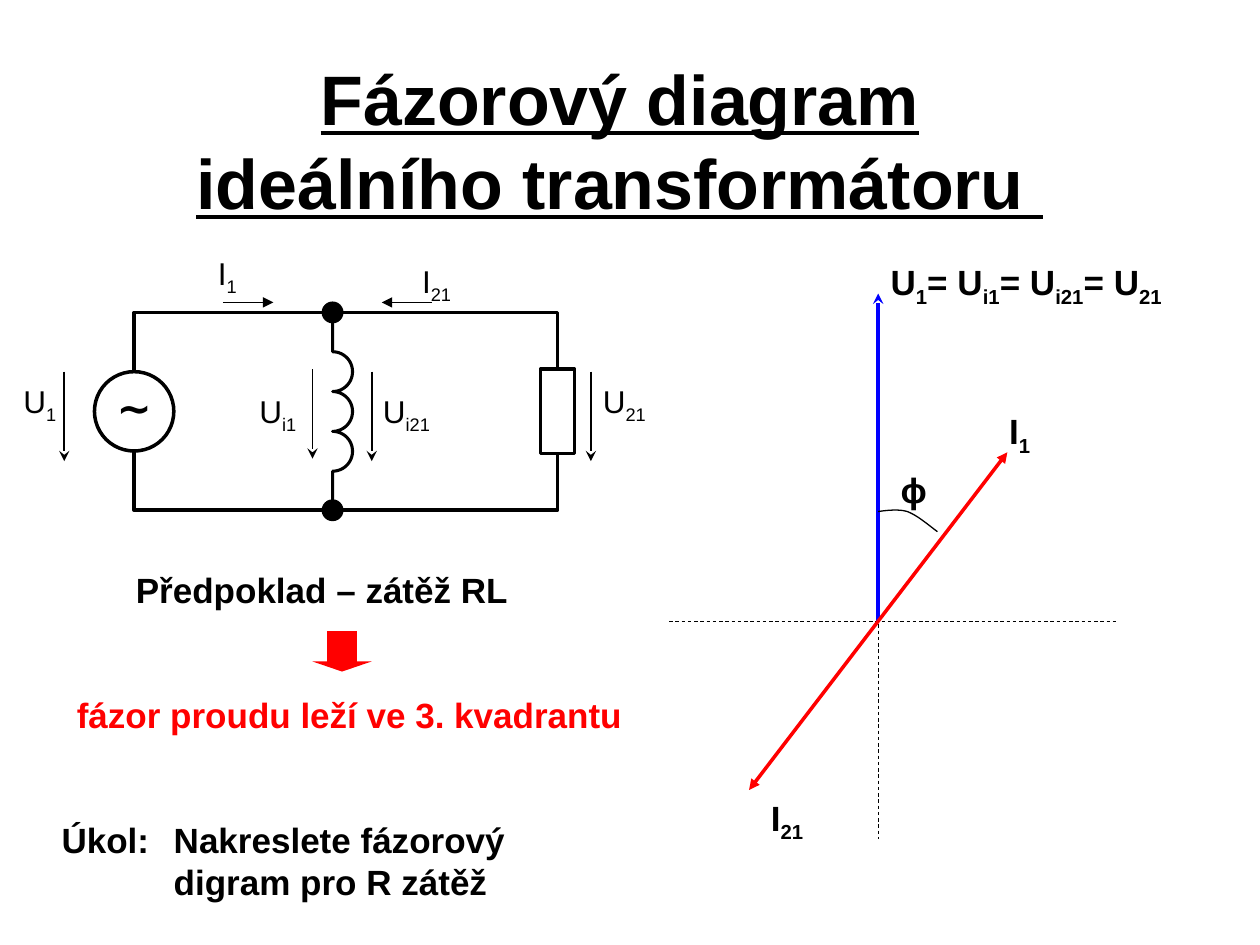
import math
from lxml import etree
from pptx import Presentation, util as u
from pptx.dml.color import RGBColor
from pptx.enum import dml, shapes, text
from pptx.oxml.ns import qn

INK = {"black": "000000", "red": "FF0000", "blue": "0000FF"}
COLS, ROWS = 100, 75
CELL = u.Inches(10) // COLS
TOP, LOW = 24.8, 40.5      # the two wires of the circuit
COIL, RAD = 26.4, 1.58     # axis and radius of the coil's turns
ORIGIN = (69.7, 49.3)      # start of all phasors


def grid(*vals):
    """Turn grid cells into slide lengths."""
    return [round(v * CELL) for v in vals]


def tint(name):
    return RGBColor.from_string(INK[name])


def pen(line, color, width):
    line.color.rgb = tint(color)
    line.width = u.Pt(width)


def line(slide, start, end, width=1, color="black", head=None, dash=False):
    wire = slide.shapes.add_connector(
        shapes.MSO_CONNECTOR.STRAIGHT, *grid(*start, *end))
    pen(wire.line, color, width)
    if dash:
        wire.line.dash_style = dml.MSO_LINE.DASH
    if head:
        etree.SubElement(wire.line._get_or_add_ln(), qn("a:tailEnd"), type=head)
    etree.SubElement(wire._element.spPr, qn("a:effectLst"))


def path(slide, pts, width):
    """Draw an open, unfilled outline through the points."""
    first, *rest = [grid(*p) for p in pts]
    form = slide.shapes.build_freeform(*first)
    form.add_line_segments(rest, close=False)
    shape = form.convert_to_shape()
    shape.shadow.inherit = False
    shape.fill.background()
    pen(shape.line, "black", width)


def block(slide, kind, box, fill=None, width=None):
    shape = slide.shapes.add_shape(kind, *grid(*box))
    shape.shadow.inherit = False
    if fill:
        shape.fill.solid()
        shape.fill.fore_color.rgb = tint(fill)
    else:
        shape.fill.background()
    if width:
        pen(shape.line, "black", width)
    else:
        shape.line.fill.background()


def label(slide, words, box, size=20, bold=True, color="black",
          center=False, pad=None, middle=False, under=False):
    """Write text in which every second part between bars is a subscript."""
    frame = slide.shapes.add_textbox(*grid(*box)).text_frame
    frame.word_wrap = True
    if pad is not None:
        frame.margin_left = frame.margin_right = u.Inches(pad)
        frame.margin_top = frame.margin_bottom = u.Inches(pad)
    if middle:
        frame.vertical_anchor = text.MSO_ANCHOR.MIDDLE
    para = frame.paragraphs[0]
    para.alignment = text.PP_ALIGN.CENTER if center else text.PP_ALIGN.LEFT
    for num, part in enumerate(words.split("|")):
        run = para.add_run()
        run.text = part
        font = run.font
        font.name, font.size, font.bold = "Arial", u.Pt(size), bold
        font.underline = under
        font.color.rgb = tint(color)
        if num % 2:
            font._element.set("baseline", "-25000")
    return para


def bezier(a, b, c, d, steps=12):
    for i in range(steps + 1):
        t = i / steps
        s = 1 - t
        yield [s**3 * p + 3 * s * s * t * q + 3 * s * t * t * r + t**3 * v
               for p, q, r, v in zip(a, b, c, d)]


def coil(slide):
    pts = [(COIL, 25.6)]
    for turn in range(3):
        mid = 29.5 + turn * 2 * RAD
        for deg in range(-90, 91, 6):
            ang = math.radians(deg)
            pts.append((COIL + RAD * math.cos(ang), mid + RAD * math.sin(ang)))
    path(slide, pts + [(COIL, 39.7)], 1.75)


def circuit(slide):
    kind = shapes.MSO_SHAPE
    block(slide, kind.OVAL, (7.5, 29.5, 6.3, 6.3), width=2)
    block(slide, kind.RECTANGLE, (42.9, 29.3, 2.7, 6.7), width=2)
    for row, ends in ((TOP, (29.4, 29.2)), (LOW, (35.9, 36.1))):
        block(slide, kind.OVAL, (COIL - 0.8, row - 0.8, 1.6, 1.6), "black", 1)
        for col, end in zip((10.65, 44.25), ends):
            path(slide, [(col, end), (col, row), (COIL, row)], 2)
    coil(slide)
    for col, row in ((5.1, 29.5), (24.8, 29.3), (29.5, 29.5), (46.9, 29.5)):
        line(slide, (col, row), (col, row + 7.1), head="stealth")
    for start, end in ((17.7, 21.7), (34.3, 30.3)):
        line(slide, (start, 24), (end, 24), head="triangle")
    for words, left, top, wide in (
            ("U|1", 1.2, 30.3, 3.9), ("I|1", 16.1, 20.2, 3.9),
            ("I|21", 32.7, 20.8, 3.9), ("U|21", 47.6, 30.3, 3.9),
            ("U|i1", 20.1, 31.1, 3.9), ("U|i21", 29.5, 31.1, 5.5)):
        label(slide, words, (left, top, wide, 3), 18, False, center=True, pad=0)
    label(slide, "∼", (8.3, 30.3, 4.7, 4), 24, center=True, pad=0, middle=True)


def phasors(slide):
    x, y = ORIGIN
    line(slide, (53.1, y), (88.6, y), 0.5, dash=True)
    line(slide, (x, 31.2), (x, 66.6), 0.5, dash=True)
    line(slide, ORIGIN, (x, 23.3), 2, "blue", "stealth")
    for side in (-1, 1):
        line(slide, ORIGIN, (x + side * 10.25, y - side * 13.4),
             2, "red", "triangle")
    arc = [*bezier((x, 40.6), (70.5, 40.5), (71.3, 40.4), (72, 40.6)),
           *bezier((72, 40.6), (72.8, 40.9), (73.6, 41.6), (74.4, 42.2))]
    path(slide, arc, 0.75)
    for words, left, top, wide in (
            ("U|1|= U|i1|= U|i21|= U|21", x, 20.2, 26),
            ("I|1", 79.1, 32, 5.1), ("I|21", 60.2, 62.7, 5.1),
            ("ϕ", 70.5, 36.7, 5.1)):
        label(slide, words, (left, top, wide, 4.3))


def notes(slide):
    label(slide, "Předpoklad – zátěž RL", (9.8, 44.6, 33.1, 4.3))
    block(slide, shapes.MSO_SHAPE.DOWN_ARROW, (24.8, 50.1, 4.7, 3.2), "red")
    slide.shapes[-1].adjustments[1] = 0.25
    label(slide, "fázor proudu leží ve 3. kvadrantu", (3.9, 54.6, 47.7, 4.2),
          color="red", center=True, pad=0.04)
    task = label(slide, "Úkol: \tNakreslete fázorový digram pro R zátěž",
                 (3.9, 64.5, 38.2, 7.7))
    hang = u.Inches(0.89)
    props = task._p.get_or_add_pPr()
    props.set("marL", str(hang))
    props.set("indent", str(-hang))


def main():
    deck = Presentation()
    deck.slide_width, deck.slide_height = grid(COLS, ROWS)
    slide = deck.slides.add_slide(deck.slide_layouts[6])
    label(slide, "Fázorový diagram ideálního transformátoru ",
          (12.2, 2.8, 74, 16.5), 40, center=True, middle=True, under=True)
    circuit(slide)
    phasors(slide)
    notes(slide)
    deck.save("out.pptx")


if __name__ == "__main__":
    main()
